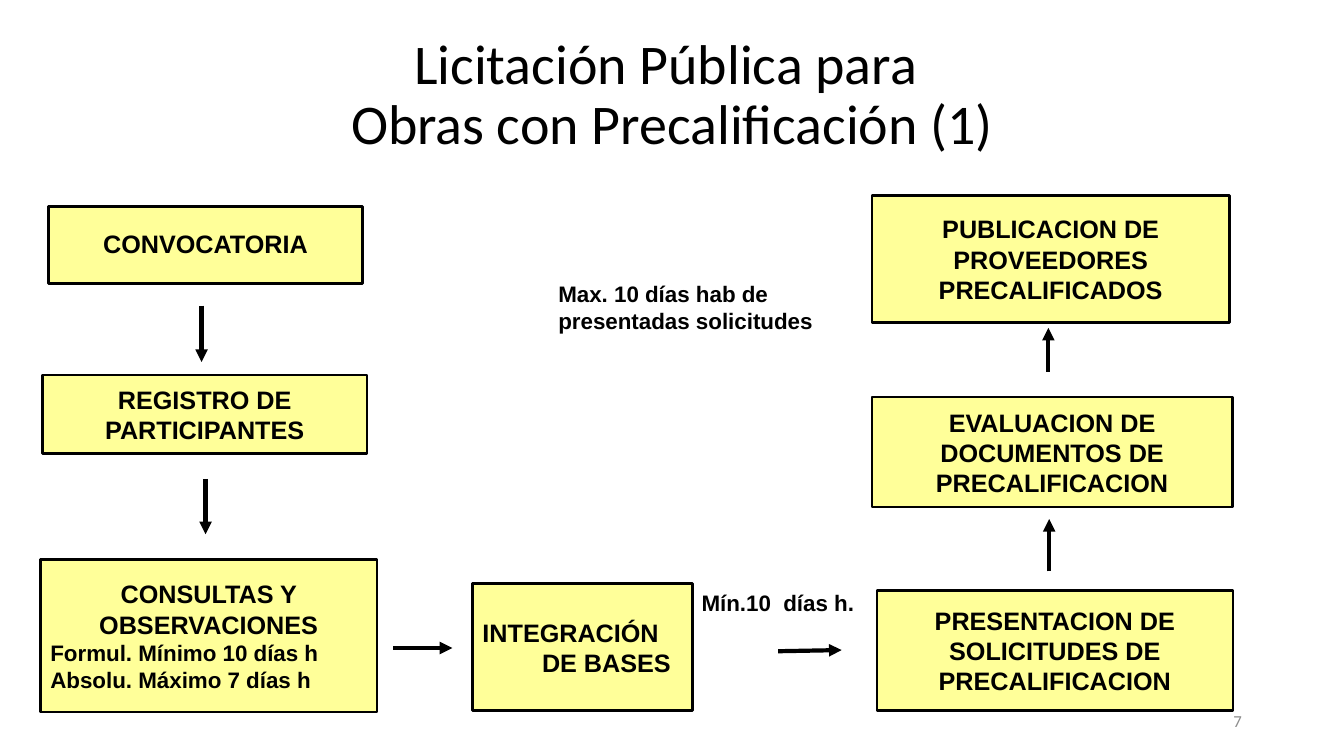
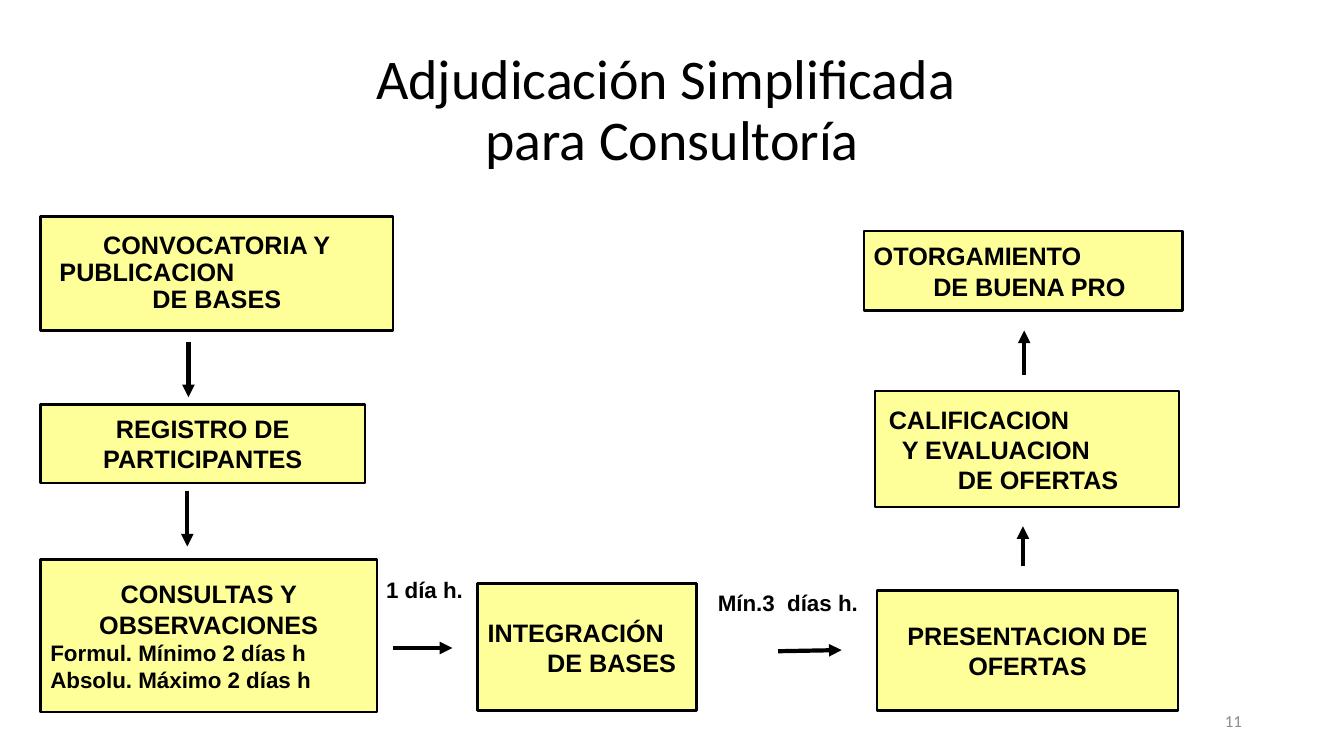
from dataclasses import dataclass

from lxml.etree import SubElement
from pptx import Presentation
from pptx.dml.color import RGBColor
from pptx.enum.shapes import MSO_CONNECTOR, MSO_SHAPE
from pptx.enum.text import MSO_ANCHOR, PP_ALIGN
from pptx.oxml.ns import qn
from pptx.util import Cm, Pt

BLACK = "000000"
GREY = "8C8C8C"
YELLOW = "FFFF99"
SLIDE_WIDTH, SLIDE_HEIGHT = 33.87, 19.05
LEFT_COLUMN = (1.02, 5.21)
MIDDLE = (9.5, 14.4)
RIGHT_COLUMN = (21.77, 4.93)
NUMBER_BOX = (23.93, 17.65, 7.62, 1.02)
STEP_INSETS = (0.25, 0.15)
NOTE_INSETS = (0.23, 0.13)


@dataclass
class Line:
    text: str
    size: int = 18
    align: PP_ALIGN = PP_ALIGN.CENTER
    indent: float = 0
    spacing: float = 1.0
    font: str = "Arial"
    bold: bool = True
    color: str = BLACK


def left_line(text, indent=0, size=18, spacing=1.0):
    return Line(text, size, PP_ALIGN.LEFT, indent, spacing)


def rgb(value):
    return RGBColor.from_string(value)


def shifted(origin, box):
    return (origin[0] + box[0], origin[1] + box[1], *box[2:])


def write_lines(shape, lines, insets, anchor=MSO_ANCHOR.MIDDLE):
    frame = shape.text_frame
    frame.word_wrap = True
    frame.vertical_anchor = anchor
    frame.margin_left = frame.margin_right = Cm(insets[0])
    frame.margin_top = frame.margin_bottom = Cm(insets[1])
    for index, line in enumerate(lines):
        paragraph = frame.add_paragraph() if index else frame.paragraphs[0]
        paragraph.text = line.text
        paragraph.alignment = line.align
        paragraph.line_spacing = line.spacing
        paragraph.font.name = line.font
        paragraph.font.size = Pt(line.size)
        paragraph.font.bold = line.bold
        paragraph.font.color.rgb = rgb(line.color)
        if line.indent:
            properties = paragraph._p.get_or_add_pPr()
            properties.set("marL", str(int(Cm(line.indent))))
            properties.set("indent", "0")


def add_text(slide, box, lines, insets=STEP_INSETS, anchor=MSO_ANCHOR.MIDDLE):
    shape = slide.shapes.add_textbox(*map(Cm, box))
    write_lines(shape, lines, insets, anchor)


def add_note(slide, box, text):
    add_text(slide, box, [left_line(text, size=16)], NOTE_INSETS, MSO_ANCHOR.TOP)


def add_step(slide, box, lines):
    shape = slide.shapes.add_shape(MSO_SHAPE.RECTANGLE, *map(Cm, box))
    shape.shadow.inherit = False
    shape.fill.solid()
    shape.fill.fore_color.rgb = rgb(YELLOW)
    shape.line.color.rgb = rgb(BLACK)
    shape.line.width = Pt(1.75)
    write_lines(shape, lines, STEP_INSETS)


def add_arrow(slide, start, end):
    connector = slide.shapes.add_connector(
        MSO_CONNECTOR.STRAIGHT, *map(Cm, (*start, *end)))
    connector.line.color.rgb = rgb(BLACK)
    connector.line.width = Pt(3)
    SubElement(connector.line._get_or_add_ln(), qn("a:tailEnd"), type="triangle")
    SubElement(connector._element.spPr, qn("a:effectLst"))


def add_column(slide, origin, steps, arrows):
    for box, lines in steps:
        add_step(slide, shifted(origin, box), lines)
    for x, start, end in arrows:
        add_arrow(slide, shifted(origin, (x, start)), shifted(origin, (x, end)))


def add_middle(slide, origin, step_box, notes):
    add_step(slide, shifted(origin, step_box),
             [left_line("INTEGRACIÓN"), left_line("DE BASES", 1.5)])
    for start, end in (((0.41, 1.93), (1.9, 1.93)), ((10.11, 2.01), (11.71, 1.98))):
        add_arrow(slide, shifted(origin, start), shifted(origin, end))
    for box, text in notes:
        add_note(slide, shifted(origin, box), text)


def add_flow_slide(presentation, title, title_box, number):
    slide = presentation.slides.add_slide(presentation.slide_layouts[6])
    add_text(slide, title_box,
             [Line(title, 40, spacing=0.9, font="Calibri", bold=False)])
    add_text(slide, NUMBER_BOX,
             [Line(number, 12, PP_ALIGN.RIGHT, font="Calibri", bold=False, color=GREY)])
    return slide


def registration_step(x, y):
    return (x, y, 8.18, 1.98), [Line("REGISTRO DE PARTICIPANTES")]


def queries_step(minimum, maximum):
    return (0, 8.89, 8.48, 3.84), [
        Line("CONSULTAS Y OBSERVACIONES"),
        left_line(f"Formul. Mínimo {minimum} días h", size=16),
        left_line(f"Absolu. Máximo {maximum} días h", size=16),
    ]


def submission_step(width, text):
    return (0.33, 9.95, width, 3.02), [Line(text)]


def build_works_slide(presentation):
    slide = add_flow_slide(
        presentation, "Licitación Pública para \nObras con Precalificación (1)",
        (0, 1.73, SLIDE_WIDTH, 1.4), "7")
    add_column(slide, LEFT_COLUMN, [
        ((0.2, 0, 7.92, 1.93), [Line("CONVOCATORIA", spacing=0.9)]),
        registration_step(0.05, 4.24),
        queries_step(10, 7),
    ], [(4.06, 2.49, 3.91), (4.16, 6.86, 8.25)])
    add_middle(slide, MIDDLE, (2.41, 0.31, 5.54, 3.2),
               [((7.95, 0.31, 4.52, 0.91), "Mín.10  días h.")])
    add_column(slide, RIGHT_COLUMN, [
        ((0.2, 0, 9.02, 3.2), [Line("PUBLICACION DE PROVEEDORES PRECALIFICADOS")]),
        ((0.2, 5.08, 9.09, 2.77), [Line("EVALUACION DE DOCUMENTOS DE PRECALIFICACION")]),
        submission_step(8.97, "PRESENTACION DE SOLICITUDES DE PRECALIFICACION"),
    ], [(4.65, 4.44, 3.33), (4.67, 9.47, 8.15)])
    add_note(slide, (13.84, 6.93, 7.21, 1.6),
             "Max. 10 días hab de presentadas solicitudes")


def build_consulting_slide(presentation):
    slide = add_flow_slide(
        presentation, "Adjudicación Simplificada \npara Consultoría",
        (0, 1.02, SLIDE_WIDTH, 3.6), "11")
    add_column(slide, LEFT_COLUMN, [
        ((0, 0.25, 8.89, 2.87), [
            Line("CONVOCATORIA Y", spacing=0.9),
            left_line("PUBLICACION", 0.23, spacing=0.9),
            Line("DE BASES", spacing=0.9),
        ]),
        registration_step(0, 4.98),
        queries_step(2, 2),
    ], [(3.73, 3.4, 4.8), (3.7, 7.16, 8.56)])
    add_middle(slide, MIDDLE, (2.54, 0.31, 5.51, 3.2), [
        ((8.36, 0.31, 4.19, 0.91), "Mín.3  días h."),
        ((0, 0, 2.84, 0.91), "1 día h."),
    ])
    add_column(slide, RIGHT_COLUMN, [
        ((0, 0.89, 8.03, 2.01),
         [left_line("OTORGAMIENTO"), left_line("DE BUENA PRO", 1.5)]),
        ((0.28, 4.93, 7.67, 2.92), [
            left_line("CALIFICACION", 0.1),
            left_line("Y EVALUACION", 0.43),
            left_line("DE OFERTAS", 1.84),
        ]),
        submission_step(7.59, "PRESENTACION DE OFERTAS"),
    ], [(4.04, 4.52, 3.4), (4.01, 9.34, 8.33)])


def main():
    presentation = Presentation()
    presentation.slide_width = Cm(SLIDE_WIDTH)
    presentation.slide_height = Cm(SLIDE_HEIGHT)
    build_works_slide(presentation)
    build_consulting_slide(presentation)
    presentation.save("out.pptx")


if __name__ == "__main__":
    main()
